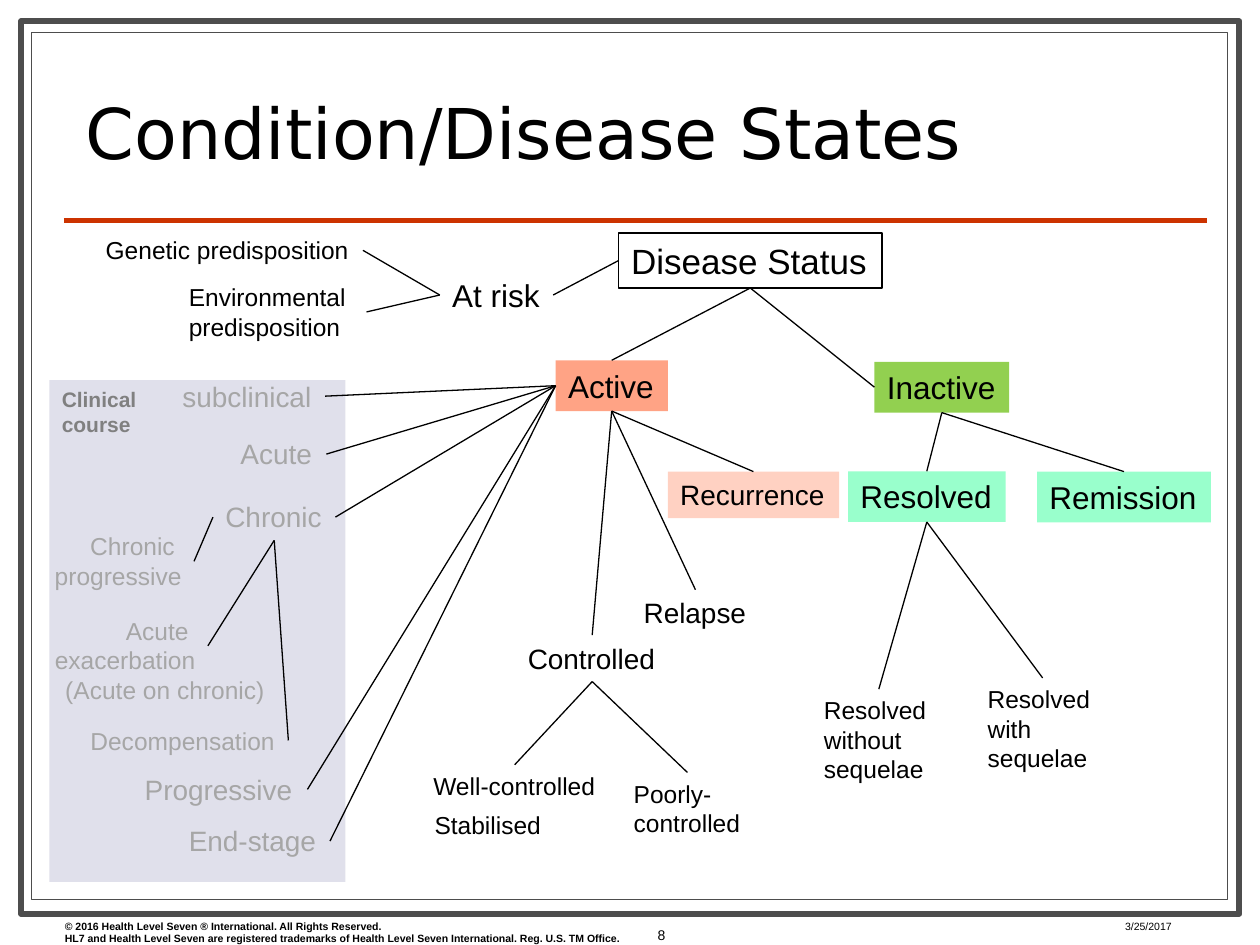
"""Draw the condition and disease state tree on one slide."""
from dataclasses import dataclass

from lxml import etree
from pptx import Presentation
from pptx import util as u
from pptx.dml.color import RGBColor
from pptx.enum import shapes, text
from pptx.oxml.ns import qn

Pt = u.Pt
TOP, LEFT, BASE, RIGHT = range(4)


@dataclass(frozen=True)
class Theme:
    font: str = "Arial"
    head: str = "DejaVu Sans"
    ink: str = "000000"
    mute: str = "A6A6A6"
    label: str = "808080"
    paper: str = "FFFFFF"
    frame: str = "4D4D4D"
    rule: str = "CC3300"
    panel: str = "E0E0EB"
    coral: str = "FFA385"
    blush: str = "FFD1C2"
    green: str = "92D050"
    mint: str = "99FFCC"
    title: int = 40
    root: int = 20
    large: int = 18
    mid: int = 16
    small: int = 14
    tag: int = 12
    page: int = 8
    foot: int = 6
    thin: float = 0.75


T = Theme()

# key: (text, left, top, width, size, colour)
NODES = {
    "risk": ("At risk", 251.3, 154.1, 64.8, T.large, T.ink),
    "gene": ("Genetic predisposition", 53.3, 131, 154.1, T.small, T.ink),
    "env": ("Environmental\npredisposition", 100.8, 157.7, 108.7, T.small, T.ink),
    "sub": ("subclinical", 97.2, 213.1, 88.6, T.mid, T.mute),
    "acute": ("Acute", 130.3, 246.2, 56.2, T.mid, T.mute),
    "chron": ("Chronic", 121.7, 282.2, 70, T.mid, T.mute),
    "slow": ("Chronic \nprogressive", 23.8, 300.2, 87.1, T.small, T.mute),
    "flare": ("Acute \nexacerbation", 23.8, 348.5, 95, T.small, T.mute),
    "mixed": ("(Acute on chronic)", 30.2, 382.3, 128.9, T.small, T.mute),
    "decomp": ("Decompensation", 44.6, 411.1, 120.2, T.small, T.mute),
    "prog": ("Progressive", 75.6, 437.8, 100.1, T.mid, T.mute),
    "end": ("End-stage", 100.8, 467.3, 87.8, T.mid, T.mute),
    "held": ("Controlled", 294.5, 362.9, 87.8, T.mid, T.ink),
    "lapse": ("Relapse", 360.7, 337, 73.4, T.mid, T.ink),
    "free": ("Resolved\nwithout\nsequelae", 463.7, 393.8, 77, T.small, T.ink),
    "scar": ("Resolved\nwith\nsequelae", 557.3, 387.4, 77, T.small, T.ink),
    "poor": ("Poorly-\ncontrolled", 355, 441.4, 75.6, T.small, T.ink),
    "stable": ("Stabilised", 241.2, 459.4, 75.6, T.small, T.ink),
    "well": ("Well-controlled", 240.5, 437, 107.3, T.small, T.ink),
}

# key: (text, left, top, width, size, colour, fill, outline)
BLOCKS = {
    "root": ("Disease Status", 353.5, 133.2, 150.5, T.root, T.ink, None, T.ink),
    "on": ("Active", 317.5, 205.9, 64.1, T.large, T.ink, T.coral, None),
    "off": ("Inactive", 499.7, 206.8, 77, T.large, T.ink, T.green, None),
    "again": ("Recurrence", 381.6, 269.5, 97.9, T.mid, T.ink, T.blush, None),
    "done": ("Resolved", 484.6, 269.3, 90, T.large, T.ink, T.mint, None),
    "quiet": ("Remission", 592.6, 269.5, 99.4, T.large, T.ink, T.mint, None),
}

# (parent, side, child side, children)
LINKS = [
    ("root", LEFT, RIGHT, ["risk"]),
    ("root", BASE, TOP, ["on"]),
    ("root", BASE, LEFT, ["off"]),
    ("risk", LEFT, RIGHT, ["gene", "env"]),
    ("on", LEFT, RIGHT, ["sub", "acute", "chron", "prog", "end"]),
    ("on", BASE, TOP, ["again", "held", "lapse"]),
    ("off", BASE, TOP, ["done", "quiet"]),
    ("done", BASE, TOP, ["free", "scar"]),
    ("held", BASE, TOP, ["well", "poor"]),
    ("chron", LEFT, RIGHT, ["slow"]),
    ("chron", BASE, RIGHT, ["flare", "decomp"]),
]


def rgb(code):
    """Turn a hex code into a colour."""
    return RGBColor.from_string(code)


def put(item, vals):
    """Set each named format value on an item."""
    for name, val in vals.items():
        setattr(item, name, val)


def write(shape, words, size, ink, bold=False, font=T.font, align="LEFT",
          anchor="TOP", space=None, fit=False):
    """Fill a shape with styled paragraphs."""
    frame = shape.text_frame
    frame.text = words
    auto = text.MSO_AUTO_SIZE
    put(frame, {
        "word_wrap": not fit,
        "auto_size": auto.SHAPE_TO_FIT_TEXT if fit else auto.NONE,
        "vertical_anchor": text.MSO_ANCHOR[anchor],
    })
    for para in frame.paragraphs:
        put(para, {"alignment": text.PP_ALIGN[align], "line_spacing": space})
        for run in para.runs:
            put(run.font, {"name": font, "size": Pt(size), "bold": bold})
            run.font.color.rgb = rgb(ink)


def rect(slide, area, fill=None, line=None, width=T.thin):
    """Add a flat rectangle."""
    shape = slide.shapes.add_shape(shapes.MSO_SHAPE.RECTANGLE, *map(Pt, area))
    shape.shadow.inherit = False
    for part, hue in ((shape.fill, fill), (shape.line.fill, line)):
        if hue:
            part.solid()
            part.fore_color.rgb = rgb(hue)
        else:
            part.background()
    if line:
        shape.line.width = Pt(width)
    return shape


def note(slide, area, words, size, **look):
    """Add a text box in the main ink."""
    write(slide.shapes.add_textbox(*map(Pt, area)), words, size, T.ink, **look)


def node(slide, words, left, top, width, size, ink, fill=None, line=None):
    """Add a tree node sized to its lines of text."""
    high = round(7.2 + 1.21 * size * (words.count("\n") + 1), 1)
    area = left, top, width, high
    if fill or line:
        shape = rect(slide, area, fill, line)
    else:
        shape = slide.shapes.add_textbox(*map(Pt, area))
    write(shape, words, size, ink, fit=True,
          align="RIGHT" if " \n" in words else "LEFT")
    return shape


def wire(slide, ends=(0, 0, 0, 0), hue=T.ink, width=T.thin):
    """Add a plain straight line."""
    line = slide.shapes.add_connector(
        shapes.MSO_CONNECTOR.STRAIGHT, *map(Pt, ends))
    line.line.color.rgb = rgb(hue)
    line.line.width = Pt(width)
    etree.SubElement(line._element.spPr, qn("a:effectLst"))
    return line


def base(slide):
    """Add the frame, title, panel and footer."""
    rect(slide, (12.2, 12.2, 696, 510), T.paper, T.frame, 3.5)
    rect(slide, (18.2, 18.5, 683.3, 495.4), T.paper, T.frame)
    wire(slide, (36.5, 126, 689.8, 126), T.rule, 3)
    note(slide, (41.8, 37.4, 662.2, 64.8), "Condition/Disease States",
         T.title, font=T.head, anchor="BOTTOM", space=0.8)
    panel = rect(slide, (28.2, 217.2, 169.2, 286.8), T.panel)
    write(panel, "Clinical\ncourse", T.tag, T.label, bold=True)
    note(slide, (30, 522, 347.8, 21.6),
         "© 2016 Health Level Seven ® International. All Rights Reserved.\n"
         "HL7 and Health Level Seven are registered trademarks of "
         "Health Level Seven International. Reg. U.S. TM Office.",
         T.foot, bold=True)
    note(slide, (635.8, 522, 66.2, 12.2), "3/25/2017", T.foot)
    note(slide, (345.6, 515.5, 41.8, 37.4), "8", T.page,
         align="RIGHT", anchor="MIDDLE")


def main():
    """Build and save the slide."""
    deck = Presentation()
    put(deck, {"slide_width": Pt(720), "slide_height": Pt(540)})
    slide = deck.slides.add_slide(deck.slide_layouts[6])
    base(slide)
    tree = {key: node(slide, *row) for key, row in (NODES | BLOCKS).items()}
    for parent, side, near, kids in LINKS:
        for kid in kids:
            line = wire(slide)
            line.begin_connect(tree[parent], side)
            line.end_connect(tree[kid], near)
    deck.save("out.pptx")


if __name__ == "__main__":
    main()
